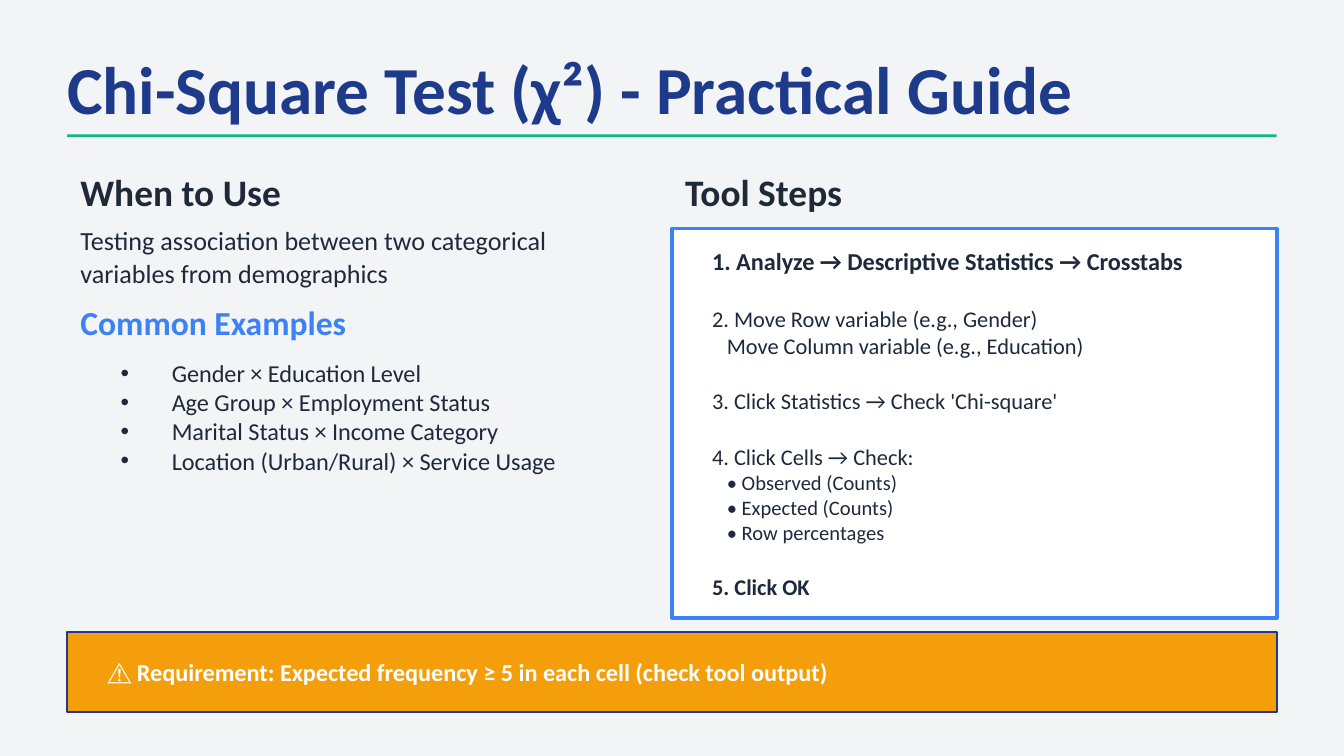
from lxml.etree import SubElement
from pptx import Presentation
from pptx.dml.color import RGBColor
from pptx.enum.shapes import MSO_SHAPE as Shape
from pptx.enum.text import MSO_ANCHOR as Anchor
from pptx.oxml.ns import qn
from pptx.util import Pt

PX = 9144
NAVY, BLUE, GREEN, AMBER = "1E3A8A", "3B82F6", "10B981", "F59E0B"
HEADING, BODY, WHITE, PALE = "1F2937", "1E293B", "FFFFFF", "F3F4F6"
EXAMPLES = [
    "Gender × Education Level",
    "Age Group × Employment Status",
    "Marital Status × Income Category",
    "Location (Urban/Rural) × Service Usage",
]
STEP = dict(size=12, before=15.5)
CHECK = dict(size=11, left=11)
STEPS = [
    ("1. Analyze → Descriptive Statistics → Crosstabs", dict(size=13, bold=True)),
    ("2. Move Row variable (e.g., Gender)", STEP),
    ("Move Column variable (e.g., Education)", dict(size=12, left=11)),
    ("3. Click Statistics → Check 'Chi-square'", STEP),
    ("4. Click Cells → Check:", STEP),
    ("• Observed (Counts)", CHECK),
    ("• Expected (Counts)", CHECK),
    ("• Row percentages", CHECK),
    ("5. Click OK", dict(STEP, bold=True)),
]


def color(hex_code):
    """Turn a hex string into a color."""
    return RGBColor.from_string(hex_code)


def emu(*lengths):
    """Turn px lengths into EMU."""
    return [length * PX for length in lengths]


def add_panel(page, box, fill, line=None, weight=1):
    """Draw a flat rectangle."""
    panel = page.shapes.add_shape(Shape.RECTANGLE, *emu(*box))
    panel.shadow.inherit = False
    panel.fill.solid()
    panel.fill.fore_color.rgb = color(fill)
    if line:
        panel.line.color.rgb = color(line)
        panel.line.width = Pt(weight)
    else:
        panel.line.fill.background()


def add_frame(page, box):
    """Add an empty wrapping text box, centred vertically."""
    frame = page.shapes.add_textbox(*emu(*box)).text_frame
    frame.word_wrap = True
    frame.vertical_anchor = Anchor.MIDDLE
    return frame


def write(para, text, size, ink=BODY, bold=False, before=0, left=0, bullet=False):
    """Fill one paragraph and style it."""
    para.text = text
    if before:
        para.space_before = Pt(before)
    if left:
        props = para._p.get_or_add_pPr()
        props.set("marL", str(left * PX))
        props.set("indent", str(-left * PX if bullet else 0))
        if bullet:
            SubElement(props, qn("a:buFont"), typeface="Arial")
            SubElement(props, qn("a:buChar"), char="•")
    font = para.font
    font.name, font.size, font.bold = "Calibri", Pt(size), bold
    font.color.rgb = color(ink)


def add_text(page, box, text, size, ink=BODY, bold=False):
    """Add a box of one paragraph and return its frame."""
    frame = add_frame(page, box)
    write(frame.paragraphs[0], text, size, ink, bold)
    return frame


def add_lines(page, box, lines):
    """Add a box with one paragraph for each text and style pair."""
    frame = add_frame(page, box)
    for index, (text, style) in enumerate(lines):
        para = frame.add_paragraph() if index else frame.paragraphs[0]
        write(para, text, **style)


def add_title(page, left, top, width):
    """Place the title and the rule below it."""
    frame = add_text(page, (left, top, width, 50), "Chi-Square Test (χ²) - Practical Guide", 36, NAVY, True)
    frame.margin_left = frame.margin_right = frame.margin_top = frame.margin_bottom = 0
    add_panel(page, (left, top + 60, width, 2), GREEN)


def add_usage(page, left, top, width):
    """Place the column on when to use the test."""
    add_text(page, (left, top, width, 35), "When to Use", 20, HEADING, True)
    purpose = "Testing association between two categorical variables from demographics"
    frame = add_text(page, (left, top + 40, width, 50), purpose, 14)
    frame.paragraphs[0].line_spacing = Pt(18)
    add_text(page, (left, top + 100, width, 30), "Common Examples", 18, BLUE, True)
    style = dict(size=13, left=38, bullet=True)
    add_lines(page, (left + 30, top + 135, width - 30, 100), [(text, style) for text in EXAMPLES])


def add_steps(page, left, top, width):
    """Place the column of numbered steps."""
    add_text(page, (left, top, width, 35), "Tool Steps", 20, HEADING, True)
    add_panel(page, (left, top + 45, width, 290), WHITE, BLUE, 2)
    add_lines(page, (left + 20, top + 60, width - 30, 260), STEPS)


def add_requirement(page, left, top, width):
    """Place the warning banner."""
    add_panel(page, (left, top, width, 60), AMBER, NAVY)
    warning = "⚠ Requirement: Expected frequency ≥ 5 in each cell (check tool output)"
    add_text(page, (left + 20, top + 15, width - 40, 30), warning, 13, WHITE, True)


def main():
    """Build the deck and save it."""
    deck = Presentation()
    deck.slide_width, = emu(1000)
    deck.slide_height = deck.slide_width * 9 // 16
    page = deck.slides.add_slide(deck.slide_layouts[6])
    page.background.fill.solid()
    page.background.fill.fore_color.rgb = color(PALE)
    add_title(page, 50, 40, 900)
    add_usage(page, 50, 125, 400)
    add_steps(page, 500, 125, 450)
    add_requirement(page, 50, 470, 900)
    deck.save("out.pptx")


if __name__ == "__main__":
    main()
